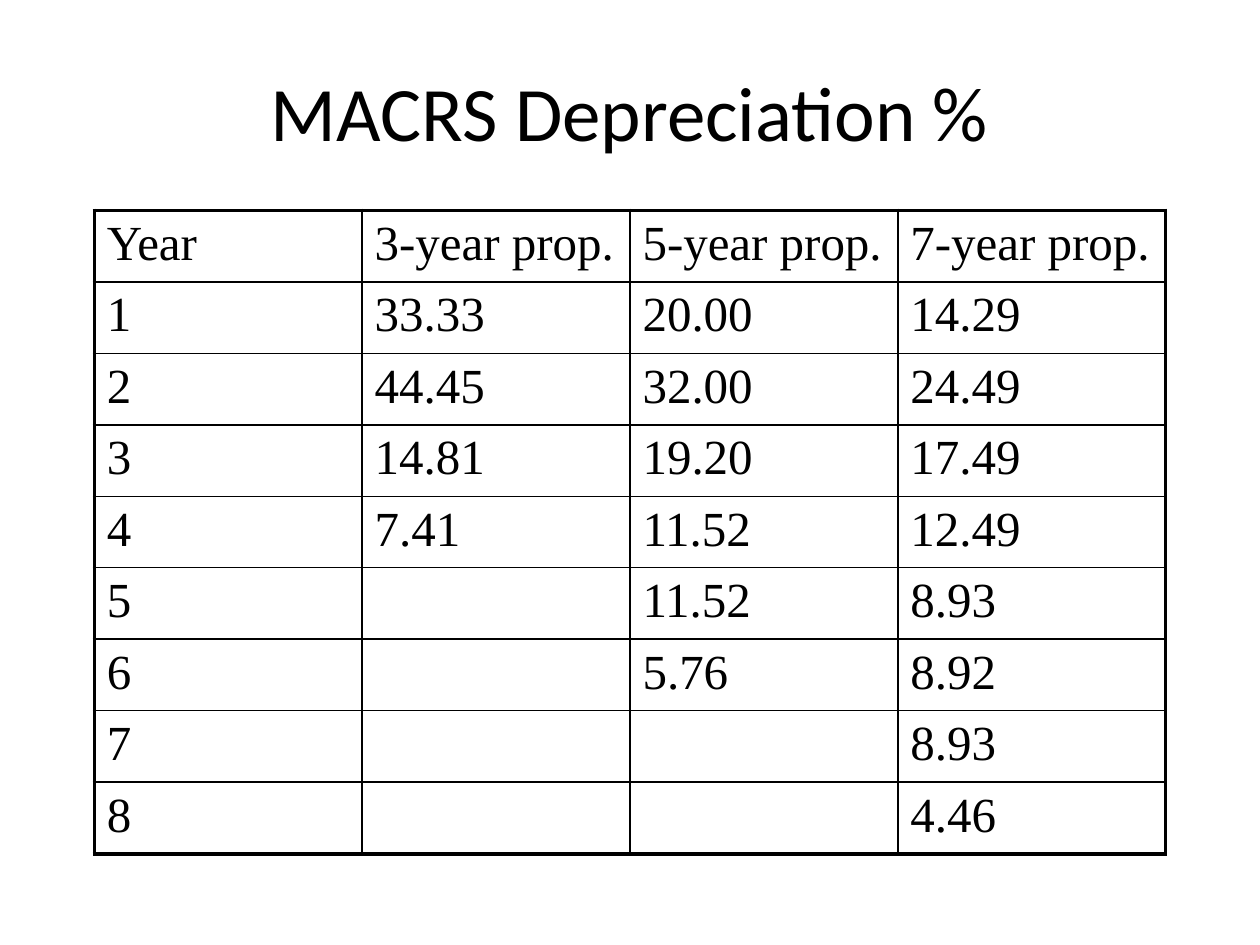
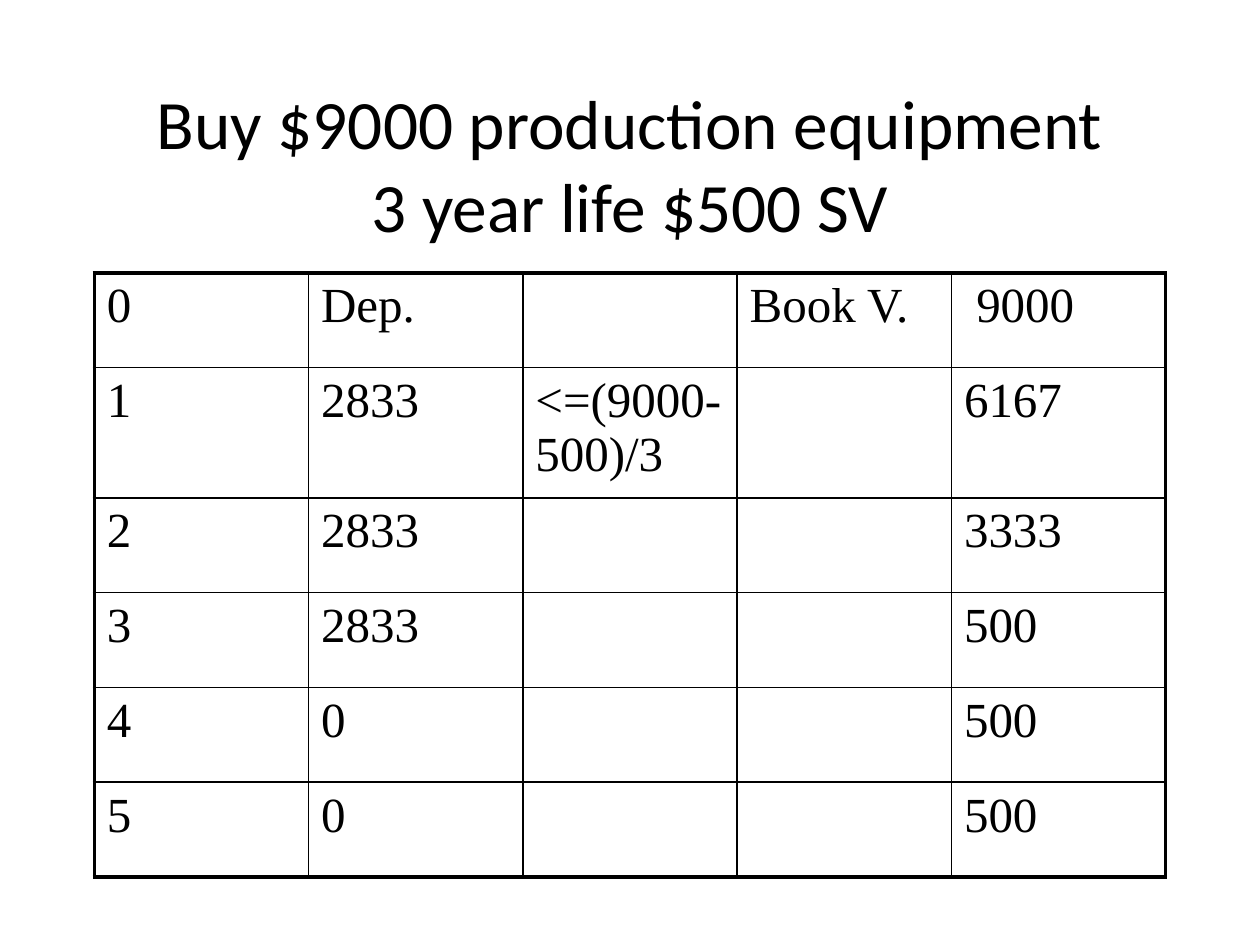
import pptx
import pptx.util
import pptx.dml.color
import pptx.enum.text
import pptx.oxml.ns
import lxml.etree

Cm = pptx.util.Cm
Pt = pptx.util.Pt
PP_ALIGN = pptx.enum.text.PP_ALIGN
COLORS = {"text": "000000", "border": "000000"}
TITLE_FONT = "Calibri"
TABLE_FONT = "Times New Roman"
LEFT, WIDTH = 1.9, 21.6
TITLE_HEIGHT = 3.18
INNER, OUTER = 1, 2.25


def write(tf, text, size=28, font=TABLE_FONT, align=PP_ALIGN.LEFT):
    p = tf.paragraphs[0]
    p.text = text
    p.alignment = align
    for r in p.runs:
        r.font.size = Pt(size)
        r.font.name = font
        r.font.color.rgb = pptx.dml.color.RGBColor.from_string(COLORS["text"])


def add_border(cell, side, width):
    qn = pptx.oxml.ns.qn
    tcPr = cell._tc.get_or_add_tcPr()
    ln = lxml.etree.SubElement(tcPr, qn("a:ln" + side), w=str(Pt(width)))
    fill = lxml.etree.SubElement(ln, qn("a:solidFill"))
    lxml.etree.SubElement(fill, qn("a:srgbClr"), val=COLORS["border"])


slides = [
    {
        "title": "MACRS Depreciation %",
        "title_top": 0.64,
        "title_size": 44,
        "table_top": 4.24,
        "row_heights": [1.35] * 8 + [1.45],
        "rows": [
            ["Year", "3-year prop.", "5-year prop.", "7-year prop."],
            ["1", "33.33", "20.00", "14.29"],
            ["2", "44.45", "32.00", "24.49"],
            ["3", "14.81", "19.20", "17.49"],
            ["4", "7.41", "11.52", "12.49"],
            ["5", "", "11.52", "8.93"],
            ["6", "", "5.76", "8.92"],
            ["7", "", "", "8.93"],
            ["8", "", "", "4.46"],
        ],
    },
    {
        "title": "Buy $9000 production equipment\v3 year life $500 SV",
        "title_top": 1.7,
        "title_size": 39.6,
        "table_top": 5.5,
        "row_heights": [1.91, 2.44] + [1.91] * 4,
        "rows": [
            ["0", "Dep.", "", "Book V.", " 9000"],
            ["1", "2833", "<=(9000-500)/3", "", "6167"],
            ["2", "2833", "", "", "3333"],
            ["3", "2833", "", "", "500"],
            ["4", "0", "", "", "500"],
            ["5", "0", "", "", "500"],
        ],
    },
]

prs = pptx.Presentation()
prs.slide_width = Cm(25.4)
prs.slide_height = Cm(19.05)

for content in slides:
    s = prs.slides.add_slide(prs.slide_layouts[6])

    sp = s.shapes.add_textbox(Cm(LEFT), Cm(content["title_top"]), Cm(WIDTH), Cm(TITLE_HEIGHT))
    tf = sp.text_frame
    tf.word_wrap = True
    tf.vertical_anchor = pptx.enum.text.MSO_ANCHOR.MIDDLE
    write(tf, content["title"], size=content["title_size"], font=TITLE_FONT, align=PP_ALIGN.CENTER)

    rows, heights = content["rows"], content["row_heights"]
    n_rows, n_cols = len(rows), len(rows[0])
    table = s.shapes.add_table(
        n_rows, n_cols, Cm(LEFT), Cm(content["table_top"]), Cm(WIDTH), Cm(sum(heights))
    ).table
    table.first_row = False
    table.horz_banding = False
    for col in table.columns:
        col.width = Cm(WIDTH / n_cols)

    for i, row in enumerate(rows):
        table.rows[i].height = Cm(heights[i])
        for j, text in enumerate(row):
            cell = table.cell(i, j)
            if text:
                write(cell.text_frame, text)
            on_edge = {"L": j == 0, "R": j == n_cols - 1, "T": i == 0, "B": i == n_rows - 1}
            for side, outer in on_edge.items():
                add_border(cell, side, OUTER if outer else INNER)
            cell.fill.background()

prs.save("out.pptx")
